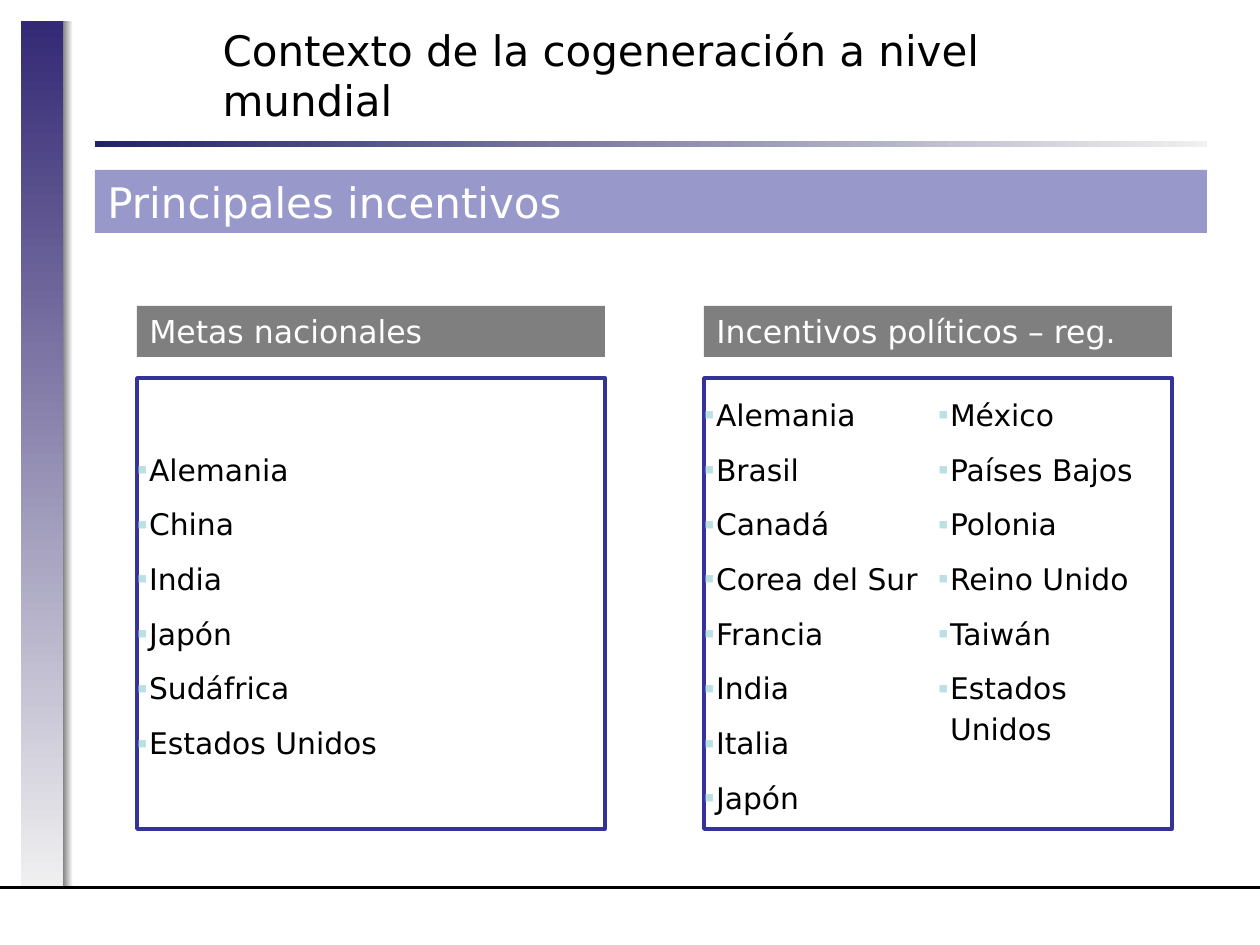
from lxml.etree import SubElement
from pptx import Presentation
from pptx.dml.color import RGBColor
from pptx.enum.shapes import MSO_CONNECTOR, MSO_SHAPE
from pptx.enum.text import MSO_ANCHOR, MSO_AUTO_SIZE, PP_ALIGN
from pptx.oxml.ns import qn
from pptx.util import Emu, Pt

FONT = "DejaVu Sans"
COLORS = {
    "black": "000000", "white": "FFFFFF", "indigo": "333399",
    "bar": "342975", "rule": "222267", "fade": "F0F0F0",
    "shadow": "808080", "bullet": "BBE0E3",
}
PANEL_WIDTH = 468
PANELS = [
    (137, "Metas nacionales", 1,
     ["Alemania", "China", "India", "Japón", "Sudáfrica", "Estados Unidos"]),
    (704, "Incentivos políticos – reg.", 2,
     ["Alemania", "Brasil", "Canadá", "Corea del Sur", "Francia", "India",
      "Italia", "Japón", "México", "Países Bajos", "Polonia", "Reino Unido",
      "Taiwán", "Estados Unidos"]),
]


def px(value):
    """Turn pixels into EMU."""
    return Emu(round(value * 914400 / 126))


def color(name):
    """Look up a colour by name."""
    return RGBColor.from_string(COLORS[name])


def place(shape, left, top, width, height):
    """Set position and size in pixels."""
    shape.left, shape.top = px(left), px(top)
    shape.width, shape.height = px(width), px(height)


def add_run(paragraph, text, size, color_name):
    """Add one formatted run."""
    run = paragraph.add_run()
    run.text = text
    run.font.name = FONT
    run.font.size = Pt(size)
    run.font.color.rgb = color(color_name)


def set_frame(frame, anchor=MSO_ANCHOR.MIDDLE):
    """Wrap text at a fixed size with the given anchor."""
    frame.auto_size = MSO_AUTO_SIZE.NONE
    frame.word_wrap = True
    frame.vertical_anchor = anchor


def add_rectangle(slide, left, top, width, height):
    """Add a rectangle without outline or shadow."""
    shape = slide.shapes.add_shape(
        MSO_SHAPE.RECTANGLE, px(left), px(top), px(width), px(height))
    shape.shadow.inherit = False
    shape.line.fill.background()
    return shape


def add_gradient(slide, box, start, end, angle=0):
    """Add a rectangle that fades between two colours."""
    fill = add_rectangle(slide, *box).fill
    fill.gradient()
    fill.gradient_angle = angle
    for stop, name, position in zip(fill.gradient_stops, (start, end), (0, 1)):
        stop.color.rgb = color(name)
        stop.position = position


def add_band(slide, box, text, size, fill_name):
    """Add a half-transparent heading band."""
    shape = add_rectangle(slide, *box)
    shape.fill.solid()
    shape.fill.fore_color.rgb = color(fill_name)
    tint = shape.fill._xPr.find(".//" + qn("a:srgbClr"))
    SubElement(tint, qn("a:alpha"), val="50000")
    set_frame(shape.text_frame, MSO_ANCHOR.TOP)
    paragraph = shape.text_frame.paragraphs[0]
    paragraph.alignment = PP_ALIGN.LEFT
    add_run(paragraph, text, size, "white")


def add_baseline(slide):
    """Draw the line across the foot of the slide."""
    line = slide.shapes.add_connector(
        MSO_CONNECTOR.STRAIGHT, px(0), px(888), px(1260), px(888))
    line.line.color.rgb = color("black")
    line.line.width = Pt(1.75)
    SubElement(line._element.spPr, qn("a:effectLst"))


def set_bullet(paragraph):
    """Give a paragraph a hanging square bullet."""
    properties = paragraph._p.get_or_add_pPr()
    properties.set("marL", str(px(12)))
    properties.set("indent", str(px(-12)))
    bullet_color = SubElement(properties, qn("a:buClr"))
    SubElement(bullet_color, qn("a:srgbClr"), val=COLORS["bullet"])
    SubElement(properties, qn("a:buChar"), char="▪")


def fill_list(shape, left, columns, items):
    """Turn a body placeholder into an outlined country list."""
    place(shape, left, 378, PANEL_WIDTH, 451)
    shape.fill.solid()
    shape.fill.fore_color.rgb = color("white")
    shape.line.color.rgb = color("indigo")
    shape.line.width = Pt(2)
    frame = shape.text_frame
    set_frame(frame)
    frame.margin_left = frame.margin_right = 0
    frame.margin_top = frame.margin_bottom = px(6)
    frame._txBody.bodyPr.set("numCol", str(columns))
    for index, item in enumerate(items):
        paragraph = frame.add_paragraph() if index else frame.paragraphs[0]
        set_bullet(paragraph)
        paragraph.alignment = PP_ALIGN.LEFT
        paragraph.line_spacing = 1.14
        paragraph.space_before = Pt(6 if index else 0)
        paragraph.space_after = Pt(2)
        add_run(paragraph, item, 17, "black")


def fill_title(shape, text):
    """Place and fill the slide title."""
    place(shape, 210, 29, 924, 91)
    set_frame(shape.text_frame)
    paragraph = shape.text_frame.paragraphs[0]
    paragraph.alignment = PP_ALIGN.LEFT
    add_run(paragraph, text, 24, "black")


def main():
    """Build and save the slide."""
    presentation = Presentation()
    presentation.slide_width, presentation.slide_height = px(1260), px(945)
    slide = presentation.slides.add_slide(presentation.slide_layouts[3])
    add_gradient(slide, (21, 21, 42, 867), "bar", "fade", 270)
    add_gradient(slide, (63, 21, 10, 867), "shadow", "white")
    add_gradient(slide, (95, 141, 1112, 6), "rule", "fade")
    add_baseline(slide)
    fill_title(slide.shapes.title, "Contexto de la cogeneración a nivel mundial")
    add_band(slide, (95, 170, 1112, 63), "Principales incentivos", 24, "indigo")
    for index, (left, heading, columns, items) in enumerate(PANELS, start=1):
        fill_list(slide.placeholders[index], left, columns, items)
        add_band(slide, (left, 306, PANEL_WIDTH, 51), heading, 18, "black")
    presentation.save("out.pptx")


if __name__ == "__main__":
    main()
